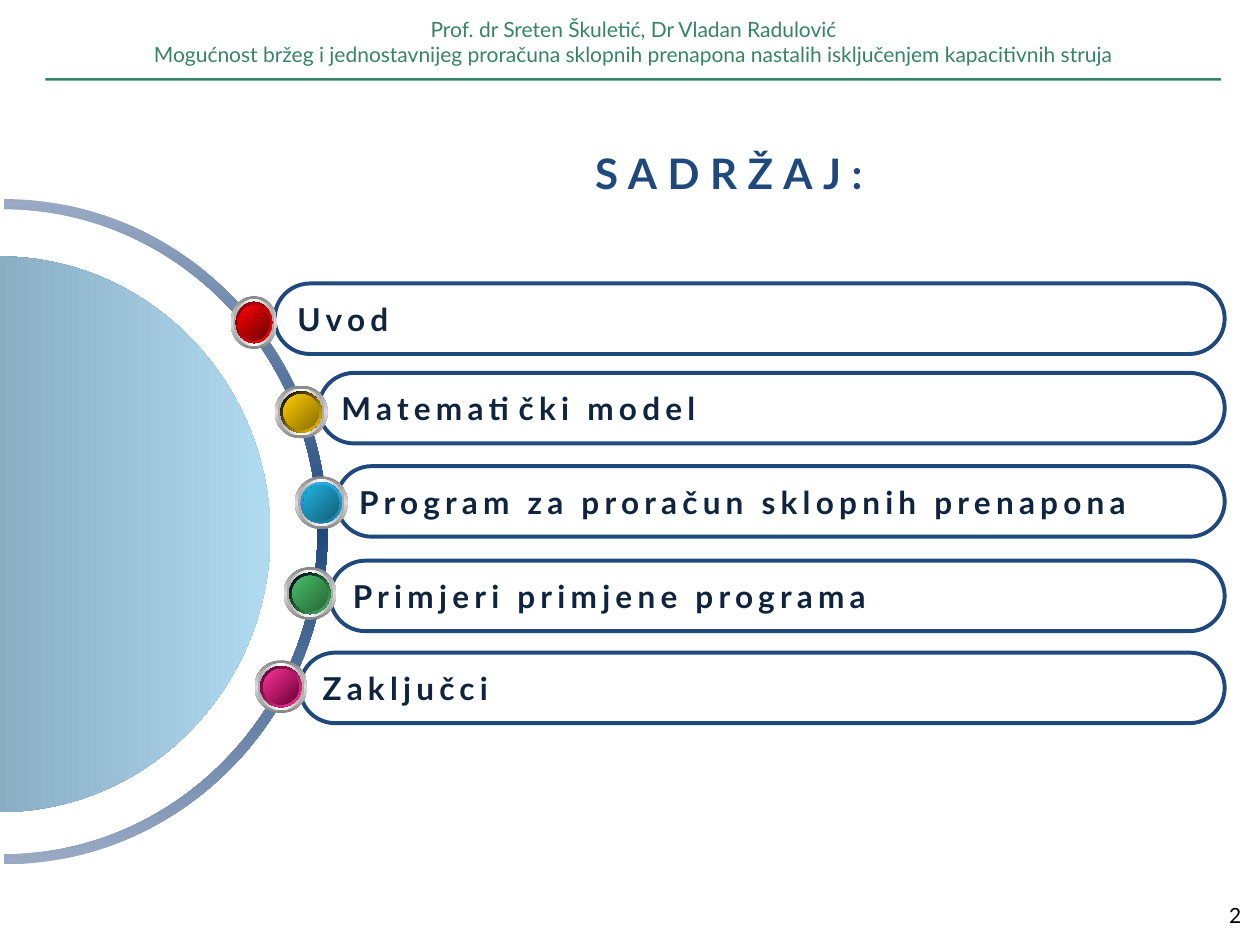
from typing import NamedTuple

import lxml.etree
import pptx
import pptx.dml.color
import pptx.enum.shapes
import pptx.enum.text
import pptx.oxml.ns
import pptx.util

COLS, ROWS = 100, 75
CELL = pptx.util.Inches(0.1)
FONT = "Lato"
GREEN, BLUE, NAVY, BLACK = "368463", "1F497D", "0F243E", "000000"
SHAPE = pptx.enum.shapes.MSO_SHAPE
ALIGN = pptx.enum.text.PP_ALIGN
MIDDLE = pptx.enum.text.MSO_ANCHOR.MIDDLE
Points = list[tuple[float, float]]
qn = pptx.oxml.ns.qn


class Box(NamedTuple):
    col: float
    row: float
    cols: float
    rows: float


class Item(NamedTuple):
    text: str
    pill_col: float
    pill_row: float
    ball: Box
    rim: tuple[str, str]
    core: tuple[str, str]
    rim_angle: int = 45


class Layer(NamedTuple):
    share: float
    colours: tuple[str, ...]
    angle: int


ITEMS = [
    Item("Uvod", 21.8, 22.5, Box(18.3, 23.5, 3.7, 4.2),
         ("820000", "FF0000"), ("FF0000", "6C0000")),
    Item("Matematički model", 25.3, 29.6, Box(21.8, 30.6, 4.2, 4.2),
         ("000000", "FFCC00"), ("FFCC00", "8A6E00")),
    Item("Program za proračun sklopnih prenapona", 26.7, 37, Box(23.4, 37.8, 4.2, 4.2),
         ("21B3E1", "1880A1"), ("21B3E1", "125F78"), 90),
    Item("Primjeri primjene programa", 26.2, 44.5, Box(22.5, 45, 4.2, 4.2),
         ("000000", "48BE67"), ("48BE67", "276838")),
    Item("Zaključci", 23.8, 51.8, Box(20.2, 52.4, 4.2, 4.2),
         ("54002A", "FF3399"), ("FF3399", "680034")),
]
PILL_RIGHT, PILL_ROWS = 97.2, 5.6


def grid(n: float) -> int:
    return round(n * CELL)


def rgb(colour: str) -> pptx.dml.color.RGBColor:
    return pptx.dml.color.RGBColor.from_string(colour)


def place(box: Box) -> list[int]:
    return [grid(n) for n in box]


def add_gradient(sp, colours: tuple[str, ...], angle: int) -> None:
    sp.shadow.inherit = False
    sp.line.fill.background()
    sp.fill.gradient()
    grad = sp.element.spPr.find(qn("a:gradFill"))
    stops = grad.find(qn("a:gsLst"))
    for stop in list(stops):
        stops.remove(stop)
    for i, colour in enumerate(colours):
        stop = lxml.etree.SubElement(stops, qn("a:gs"))
        stop.set("pos", str(round(i * 100000 / (len(colours) - 1))))
        lxml.etree.SubElement(stop, qn("a:srgbClr")).set("val", colour)
    grad.find(qn("a:lin")).set("ang", str(angle * 60000))


def add_run(p, text: str, size: int, colour: str, bold: bool = False,
            spacing: int = 0) -> None:
    r = p.add_run()
    r.text = text
    r.font.name = FONT
    r.font.size = pptx.util.Pt(size)
    r.font.bold = bold
    r.font.color.rgb = rgb(colour)
    if spacing:
        r.font._element.set("spc", str(spacing * 100))


def add_text(slide, box: Box, lines: list[str], colour: str, align, anchor=None) -> None:
    tf = slide.shapes.add_textbox(*place(box)).text_frame
    tf.word_wrap = True
    tf.vertical_anchor = anchor
    for i, line in enumerate(lines):
        p = tf.add_paragraph() if i else tf.paragraphs[0]
        p.alignment = align
        add_run(p, line, 12, colour)


def arch(x: float, y: float, rx: float, ry: float) -> Points:
    k = 0.55
    return [(x - rx, y), (x - rx, y - k * ry), (x - k * rx, y - ry), (x, y - ry),
            (x + k * rx, y - ry), (x + rx, y - k * ry), (x + rx, y)]


def add_command(outline, name: str, points: Points) -> None:
    command = lxml.etree.SubElement(outline, qn(name))
    for x, y in points:
        pt = lxml.etree.SubElement(command, qn("a:pt"))
        pt.set("x", str(grid(x)))
        pt.set("y", str(grid(y)))


def add_arch(slide, box: Box, curves: list[Points], colours: tuple[str, ...],
             angle: int) -> None:
    left, top, width, height = place(box)
    builder = slide.shapes.build_freeform(left, top)
    builder.add_line_segments([(left + width, top), (left + width, top + height),
                               (left, top + height)])
    sp = builder.convert_to_shape()
    outline = next(sp.element.iter(qn("a:path")))
    for command in list(outline):
        outline.remove(command)
    for i, curve in enumerate(curves):
        add_command(outline, "a:lnTo" if i else "a:moveTo", curve[:1])
        add_command(outline, "a:cubicBezTo", curve[1:4])
        add_command(outline, "a:cubicBezTo", curve[4:])
    add_command(outline, "a:close", [])
    sp.rotation = 90
    add_gradient(sp, colours, angle)


def add_pill(slide, item: Item) -> None:
    box = Box(item.pill_col, item.pill_row, PILL_RIGHT - item.pill_col, PILL_ROWS)
    sp = slide.shapes.add_shape(SHAPE.ROUNDED_RECTANGLE, *place(box))
    sp.adjustments[0] = 0.5
    sp.shadow.inherit = False
    sp.fill.background()
    sp.line.color.rgb = rgb(BLUE)
    sp.line.width = pptx.util.Pt(2.25)
    tf = sp.text_frame
    tf.word_wrap = True
    tf.vertical_anchor = MIDDLE
    p = tf.paragraphs[0]
    p.alignment = ALIGN.LEFT
    add_run(p, item.text, 18, NAVY, True, 3)


def add_ball(slide, item: Item) -> None:
    col, row, cols, rows = item.ball
    layers = [
        Layer(1, ("868686", "DADADA", "868686"), 90),
        Layer(0.88, ("A8A8A8", "FFFFFF", "A8A8A8"), 0),
        Layer(0.78, ("FFFFFF", "0000FF", "FFFFFF"), 45),
        Layer(0.78, item.rim, item.rim_angle),
        Layer(0.67, ("0000C3", "0000FF", "0000C3"), 315),
        Layer(0.67, item.core, 45),
    ]
    for layer in layers:
        inset = (1 - layer.share) / 2
        box = Box(col + cols * inset, row + rows * inset,
                  cols * layer.share, rows * layer.share)
        sp = slide.shapes.add_shape(SHAPE.OVAL, *place(box))
        add_gradient(sp, layer.colours, layer.angle)


def add_title(slide, text: str) -> None:
    title = slide.shapes.title
    title.left, title.top, title.width, title.height = place(Box(36.6, 11.2, 42.5, 5))
    tf = title.text_frame
    tf.word_wrap = True
    tf.vertical_anchor = MIDDLE
    p = tf.paragraphs[0]
    p.alignment = ALIGN.CENTER
    add_run(p, text, 24, BLUE, True, 6)


def main() -> None:
    prs = pptx.Presentation()
    prs.slide_width, prs.slide_height = grid(COLS), grid(ROWS)
    slide = prs.slides.add_slide(prs.slide_layouts[5])

    add_title(slide, "SADRŽAJ:")
    add_text(slide, Box(9.8, 0.8, 81, 5), [
        "Prof. dr Sreten Škuletić, Dr Vladan Radulović",
        "Mogućnost bržeg i jednostavnijeg proračuna sklopnih prenapona "
        "nastalih isključenjem kapacitivnih struja",
    ], GREEN, ALIGN.CENTER)
    rule = slide.shapes.add_shape(SHAPE.RECTANGLE, *place(Box(3.6, 6.2, 93.3, 0.2)))
    rule.shadow.inherit = False
    rule.fill.solid()
    rule.fill.fore_color.rgb = rgb(GREEN)
    rule.line.fill.background()

    outer = arch(26.4, 25.7, 26.4, 25.7)
    inner = arch(26.4, 25.7, 25.6, 24.9)
    add_arch(slide, Box(-26.5, 16.1, 52.8, 52.2), [outer, inner[::-1]],
             ("9AAAC4", BLUE, "9AAAC4"), 0)
    add_arch(slide, Box(-22.1, 20.9, 44.1, 43), [arch(22.05, 21.5, 22.05, 21.5)],
             ("617F97", "B0DAF0"), 270)

    for item in ITEMS:
        add_pill(slide, item)
        add_ball(slide, item)
    add_text(slide, Box(76.2, 70.6, 23.3, 4), ["2"], BLACK, ALIGN.RIGHT, MIDDLE)
    prs.save("out.pptx")


if __name__ == "__main__":
    main()
